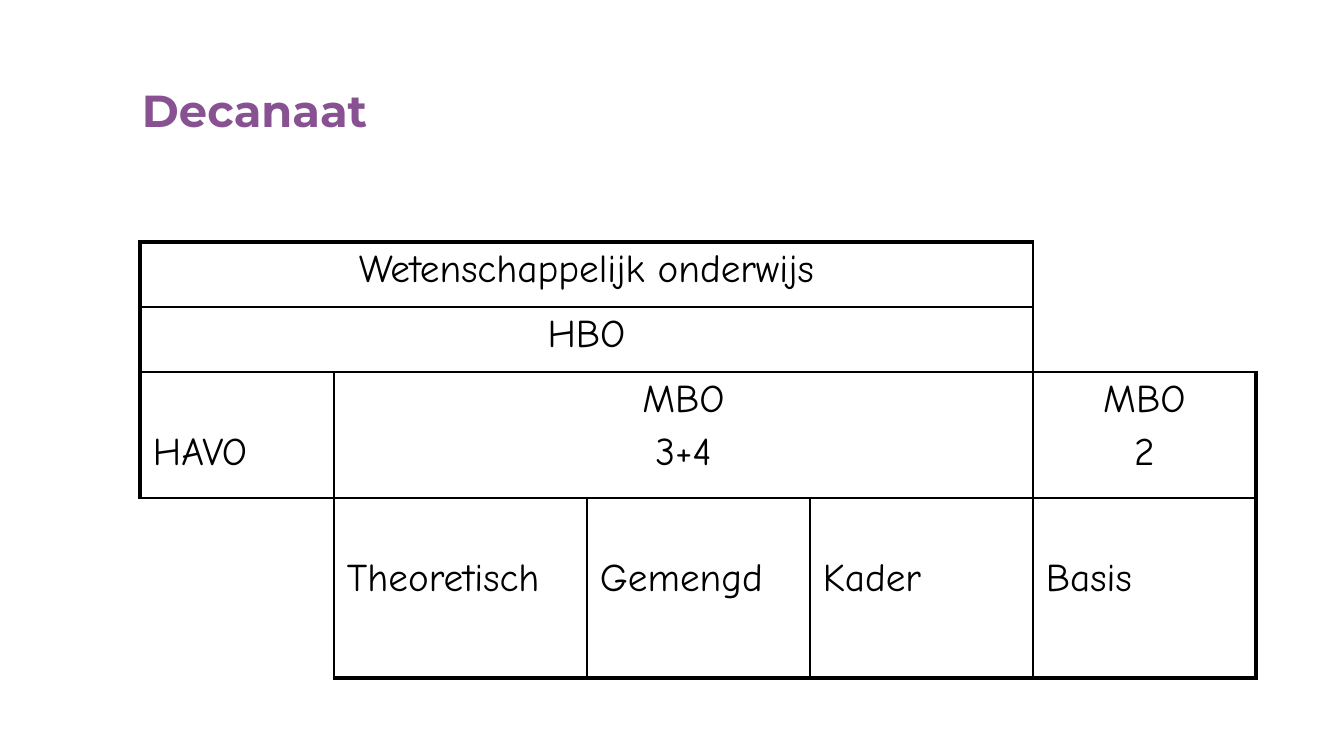
from lxml.etree import SubElement as Sub
from pptx import Presentation
from pptx.dml.color import RGBColor as RGB
from pptx.enum.text import MSO_ANCHOR as Anchor, PP_ALIGN as Align
from pptx.oxml.ns import qn
from pptx.util import Emu, Pt

COLORS = {"title": "885292", "ink": "000000"}
COLS = [194, 253, 223, 223, 223]
ROWS = [65, 65, 126, 180]
THIN, THICK = 1, 2.25
HIGH, LOW = 5, 58
AREAS = [
    (0, 0, 4, ["Wetenschappelijk onderwijs"], Align.CENTER, HIGH),
    (1, 0, 4, ["HBO"], Align.CENTER, HIGH),
    (2, 0, 1, ["HAVO"], Align.LEFT, LOW),
    (2, 1, 3, ["MBO", "3+4"], Align.CENTER, HIGH),
    (2, 4, 1, ["MBO", "2"], Align.CENTER, HIGH),
    (3, 1, 1, ["Theoretisch"], Align.LEFT, LOW),
    (3, 2, 1, ["Gemengd"], Align.LEFT, LOW),
    (3, 3, 1, ["Kader"], Align.LEFT, LOW),
    (3, 4, 1, ["Basis"], Align.LEFT, LOW),
]
BARE = {(0, 4): "L", (1, 4): "LB", (3, 0): "TR"}


def px(n):
    return Emu(round(n * 9144000 / 1344))


def style(para, name, size, color, bold=False):
    font = para.font
    font.name, font.size, font.bold = name, Pt(size), bold
    font.color.rgb = RGB.from_string(COLORS[color])


def add_title(slide, text):
    box = slide.shapes.add_textbox(px(129), px(48), px(1117), px(124))
    frame = box.text_frame
    frame.word_wrap = True
    frame.vertical_anchor = Anchor.MIDDLE
    frame.margin_left = frame.margin_right = px(13)
    frame.margin_top = frame.margin_bottom = px(13)
    para = frame.paragraphs[0]
    para.text = text
    style(para, "Montserrat", 24, "title", True)


def set_edges(cell, edges):
    props = cell._tc.get_or_add_tcPr()
    for side in "LRTB":
        line = Sub(props, qn(f"a:ln{side}"))
        if side in edges:
            line.set("w", str(Pt(edges[side])))
            fill = Sub(line, qn("a:solidFill"))
            Sub(fill, qn("a:srgbClr")).set("val", COLORS["ink"])
        else:
            Sub(line, qn("a:noFill"))
    cell.fill.background()


def fill_cell(cell, lines, align, top):
    cell.margin_left = cell.margin_right = px(13)
    cell.margin_top, cell.margin_bottom = px(top), px(5)
    frame = cell.text_frame
    for i, text in enumerate(lines):
        para = frame.add_paragraph() if i else frame.paragraphs[0]
        para.text = text
        para.alignment = align
        if i:
            para.space_before = Pt(4)
        style(para, "Comic Neue", 21, "ink")


def add_grid(slide):
    frame = slide.shapes.add_table(len(ROWS), len(COLS), px(140), px(242),
                                   px(sum(COLS)), px(sum(ROWS)))
    table = frame.table
    table.first_row = table.horz_banding = False
    for col, width in zip(table.columns, COLS):
        col.width = px(width)
    for row, height in zip(table.rows, ROWS):
        row.height = px(height)
    for row, col, span, lines, align, top in AREAS:
        end = col + span - 1
        edges = {
            "L": THICK if col == 0 else THIN,
            "R": THICK if end == len(COLS) - 1 else THIN,
            "T": THICK if row == 0 else THIN,
            "B": THICK if row == len(ROWS) - 1 else THIN,
        }
        for i in range(col, end + 1):
            set_edges(table.cell(row, i), edges)
        cell = table.cell(row, col)
        if span > 1:
            cell.merge(table.cell(row, end))
        fill_cell(cell, lines, align, top)
    for (row, col), sides in BARE.items():
        set_edges(table.cell(row, col), dict.fromkeys(sides, THIN))


def main():
    deck = Presentation()
    deck.slide_width, deck.slide_height = px(1344), px(756)
    slide = deck.slides.add_slide(deck.slide_layouts[6])
    add_title(slide, "Decanaat")
    add_grid(slide)
    deck.save("out.pptx")


if __name__ == "__main__":
    main()
